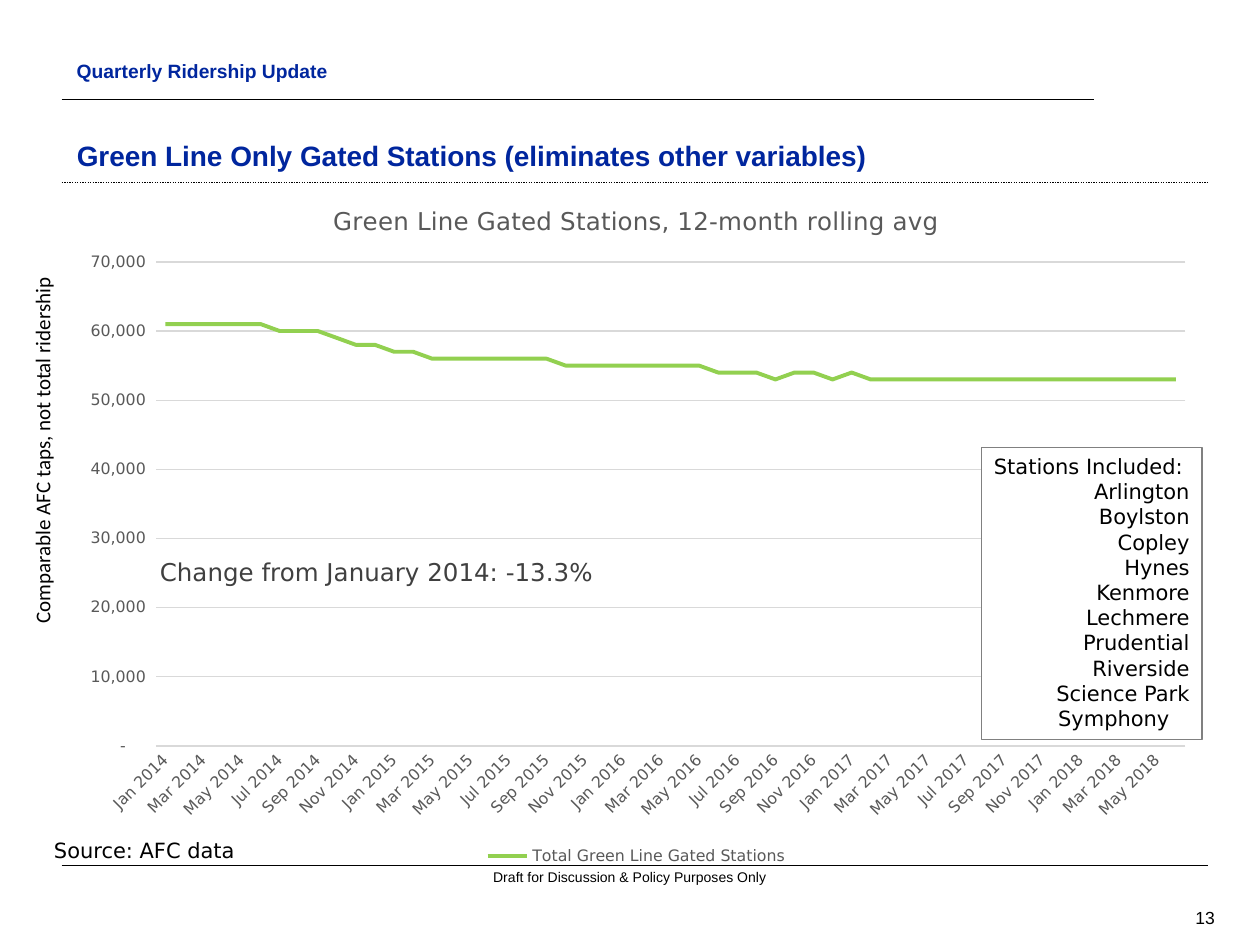
from collections import namedtuple
from itertools import product

from lxml.etree import SubElement
from pptx import Presentation
from pptx.chart.data import CategoryChartData
from pptx.dml.color import RGBColor
from pptx.enum.chart import XL_CHART_TYPE, XL_LEGEND_POSITION, XL_TICK_MARK
from pptx.enum.dml import MSO_LINE
from pptx.enum.shapes import MSO_CONNECTOR, MSO_SHAPE
from pptx.enum.text import MSO_ANCHOR, PP_ALIGN
from pptx.oxml import parse_xml
from pptx.oxml.ns import nsdecls, qn
from pptx.util import Inches, Pt

COLUMNS = 200
SLIDE_WIDTH, SLIDE_HEIGHT = Inches(10), Inches(7.5)
CELL = SLIDE_WIDTH / COLUMNS  # square cells: 200 columns by 150 rows
COLORS = {"black": "000000", "navy": "00269E", "green": "92D050", "grid": "D9D9D9",
          "label": "595959", "note": "404040", "border": "808080", "white": "FFFFFF"}
SANS = "DejaVu Sans"
STATIONS = ["Arlington", "Boylston", "Copley", "Hynes", "Kenmore", "Lechmere",
            "Prudential", "Riverside", "Science Park", "Symphony"]
MONTHS = "Jan Feb Mar Apr May Jun Jul Aug Sep Oct Nov Dec".split()
LABELS = [f"{month} {year}" for year, month in product(range(2014, 2019), MONTHS)][:54]
LABELS[LABELS.index("Oct 2016")] = "Oct-16"
THOUSANDS = [61, 61, 61, 61, 61, 61, 60, 60, 60, 59, 58, 58,
             57, 57, 56, 56, 56, 56, 56, 56, 56, 55, 55, 55,
             55, 55, 55, 55, 55, 54, 54, 54, 53, 54, 54, 53,
             54, 53, 53, 53, 53, 53, 53, 53, 53, 53, 53, 53,
             53, 53, 53, 53, 53, 53]

Box = namedtuple("Box", "left top width height")


def inside(box, left, top, width, height):
    return Box(box.left + left, box.top + top, width, height)


def to_emu(box):
    return [round(length * CELL) for length in box]


def color(name):
    return RGBColor.from_string(COLORS[name])


def style_font(font, size, color_name, name=SANS, bold=False):
    font.size, font.name, font.bold = Pt(size), name, bold
    font.color.rgb = color(color_name)


def style_line(line, color_name, width):
    line.color.rgb = color(color_name)
    line.width = Pt(width)


def write(paragraph, text, size, color_name, name=SANS, bold=False, align=PP_ALIGN.LEFT):
    paragraph.alignment = align
    run = paragraph.add_run()
    run.text = text
    style_font(run.font, size, color_name, name, bold)


def add_text(slide, box, text, size, color_name="black", name=SANS, bold=False,
             align=PP_ALIGN.LEFT, anchor=MSO_ANCHOR.TOP):
    shape = slide.shapes.add_textbox(*to_emu(box))
    shape.text_frame.word_wrap = True
    shape.text_frame.vertical_anchor = anchor
    write(shape.text_frame.paragraphs[0], text, size, color_name, name, bold, align)
    return shape


def add_rule(slide, left, top, width, weight):
    start_x, y, length, _ = to_emu(Box(left, top, width, 0))
    rule = slide.shapes.add_connector(MSO_CONNECTOR.STRAIGHT, start_x, y, start_x + length, y)
    style_line(rule.line, "black", weight)
    SubElement(rule._element.spPr, qn("a:effectLst"))
    return rule


def add_header(slide, box):
    add_rule(slide, box.left, box.top + 7.8, box.width * 0.9, 1)
    bottom_rule = add_rule(slide, box.left, box.top + box.height, box.width, 0.75)
    bottom_rule.line.dash_style = MSO_LINE.ROUND_DOT
    add_text(slide, inside(box, 0.4, 0.4, 68.2, 5), "Quarterly Ridership Update",
             11, "navy", "Arial", True)
    title = slide.shapes.title
    title.left, title.top, title.width, title.height = to_emu(inside(box, 0.4, 10.2, 185, 10.2))
    title.text_frame.vertical_anchor = MSO_ANCHOR.BOTTOM
    write(title.text_frame.paragraphs[0],
          "Green Line Only Gated Stations (eliminates other variables)", 16, "navy", "Arial", True)


def add_footer(slide, box):
    add_rule(slide, box.left, box.top, box.width, 0.75)
    disclaimer = add_text(slide, inside(box, 61.6, 0.4, 57.2, 2.6),
                          "Draft for Discussion & Policy Purposes Only", 8,
                          name="Arial", align=PP_ALIGN.CENTER)
    frame = disclaimer.text_frame
    frame.margin_left = frame.margin_right = frame.margin_top = frame.margin_bottom = 0
    add_text(slide, inside(box, 168.4, 5.8, 16.6, 5), "13", 10, name="Arial",
             align=PP_ALIGN.RIGHT, anchor=MSO_ANCHOR.MIDDLE)


def style_axes(chart):
    months, taps = chart.category_axis, chart.value_axis
    for axis in (months, taps):
        axis.major_tick_mark = axis.minor_tick_mark = XL_TICK_MARK.NONE
        style_font(axis.tick_labels.font, 9, "label")
    style_line(months.format.line, "grid", 0.75)
    months._element.find(qn("c:txPr")).find(qn("a:bodyPr")).set("rot", "-2700000")
    months._element.find(qn("c:noMultiLvlLbl")).addprevious(
        parse_xml(f'<c:tickLblSkip {nsdecls("c")} val="2"/>'))
    taps.format.line.fill.background()
    taps.minimum_scale, taps.maximum_scale, taps.major_unit = 0, 70000, 10000
    style_line(taps.major_gridlines.format.line, "grid", 0.75)
    taps.tick_labels.number_format = '_(* #,##0_);_(* \\(#,##0\\);_(* "-"??_);_(@_)'
    taps.tick_labels.number_format_is_linked = False


def set_plot_area(chart, **shares):
    """Fix the inner plot area as shares of the chart and clear the chart background."""
    plot_area = chart._chartSpace.chart.plotArea
    for layout in plot_area.findall(qn("c:layout")):
        plot_area.remove(layout)
    sizes = "".join(f'<c:{key} val="{value}"/>' for key, value in shares.items())
    plot_area.insert(0, parse_xml(
        f'<c:layout {nsdecls("c")}><c:manualLayout><c:layoutTarget val="inner"/>'
        f'<c:xMode val="edge"/><c:yMode val="edge"/>{sizes}</c:manualLayout></c:layout>'))
    chart._chartSpace.find(qn("c:txPr")).addprevious(
        parse_xml(f'<c:spPr {nsdecls("c", "a")}><a:noFill/><a:ln><a:noFill/></a:ln></c:spPr>'))


def add_ridership_chart(slide, box):
    data = CategoryChartData(number_format="#,##0")
    data.categories = LABELS
    data.add_series("Total Green Line Gated Stations", [value * 1000 for value in THOUSANDS])
    chart = slide.shapes.add_chart(XL_CHART_TYPE.LINE, *to_emu(box), data).chart
    style_font(chart.font, 10, "black")
    chart.has_title = True
    write(chart.chart_title.text_frame.paragraphs[0],
          "Green Line Gated Stations, 12-month rolling avg", 14, "label", align=PP_ALIGN.CENTER)
    chart.has_legend = True
    chart.legend.position = XL_LEGEND_POSITION.BOTTOM
    chart.legend.include_in_layout = False
    style_font(chart.legend.font, 9, "label")
    chart.plots[0].vary_by_categories = False
    series = chart.plots[0].series[0]
    series.smooth = False
    style_line(series.format.line, "green", 2.25)
    style_axes(chart)
    set_plot_area(chart, x=0.08, y=0.12, w=0.9, h=0.7)


def add_station_list(slide, box):
    shape = slide.shapes.add_shape(MSO_SHAPE.RECTANGLE, *to_emu(box))
    shape.shadow.inherit = False
    shape.fill.solid()
    shape.fill.fore_color.rgb = color("white")
    style_line(shape.line, "border", 0.75)
    frame = shape.text_frame
    frame.word_wrap = True
    frame.vertical_anchor = MSO_ANCHOR.TOP
    write(frame.paragraphs[0], "Stations Included:", 12, "black")
    for station in STATIONS:
        paragraph = frame.add_paragraph()
        write(paragraph, station, 12, "black", align=PP_ALIGN.RIGHT)
    paragraph._p.get_or_add_pPr().set("marR", str(Inches(0.16)))


def add_chart_region(slide, box):
    add_text(slide, inside(box, -3.6, 103.6, 179.8, 6), "Source: AFC data", 12)
    caption = add_text(slide, inside(box, -33.4, 39.6, 59.8, 6),
                       "Comparable AFC taps, not total ridership", 12, name="Calibri")
    caption.text_frame.word_wrap = False
    caption.rotation = 270
    add_ridership_chart(slide, box)
    add_station_list(slide, inside(box, 145.6, 42.6, 35, 46.4))
    add_text(slide, inside(box, 13.2, 59, 81.6, 6.8),
             "Change from January 2014: -13.3%", 14, "note")


def main():
    presentation = Presentation()
    presentation.slide_width, presentation.slide_height = SLIDE_WIDTH, SLIDE_HEIGHT
    slide = presentation.slides.add_slide(presentation.slide_layouts.get_by_name("Title Only"))
    add_header(slide, Box(9.8, 8, 182, 21))
    add_footer(slide, Box(9.8, 137.4, 182, 10.8))
    add_chart_region(slide, Box(10.2, 28.4, 181.6, 109.8))
    presentation.save("out.pptx")


if __name__ == "__main__":
    main()
